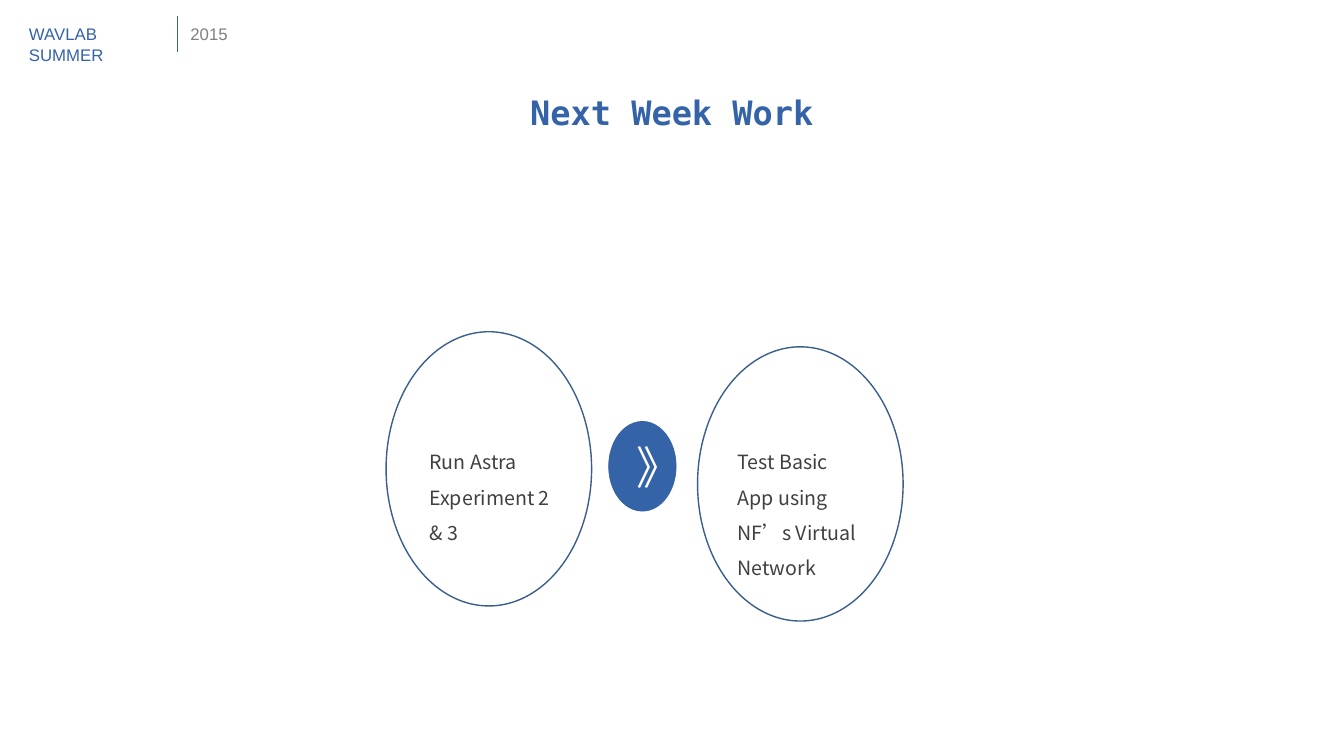
from dataclasses import dataclass

from lxml.etree import SubElement
from pptx import Presentation
from pptx.dml.color import RGBColor
from pptx.enum.shapes import MSO_CONNECTOR, MSO_SHAPE
from pptx.enum.text import MSO_ANCHOR, PP_ALIGN
from pptx.oxml.ns import qn
from pptx.util import Cm, Pt

TITLE = "Next Week Work"
HEADER = [("WAVLAB SUMMER", 0.48, 4.17), ("2015", 4.55, 1.45)]  # text, left, width
# text, ellipse left and top, text left and height
STEPS = [
    ("Run Astra Experiment 2 & 3", 9.73, 8.36, 10.57, 2.95),
    ("Test Basic App using NF’s Virtual Network", 17.58, 8.74, 18.34, 3.84),
]
STEP_W, STEP_H = 5.18, 6.91
STEP_TEXT_TOP, STEP_TEXT_W = 10.92, 3.56
BADGE = (15.34, 10.62, 1.7, 2.26)
CHEVRON = (15.85, 11.07, 0.71, 1.37)


@dataclass(frozen=True)
class Theme:
    blue: str = "3563A8"
    outline: str = "3A5F8C"
    body: str = "404040"
    grey: str = "808080"
    white: str = "FFFFFF"
    title_size: int = 24
    body_size: int = 14
    header_size: int = 12
    chevron_size: int = 32
    title_font: str = "DejaVu Sans Mono"
    body_font: str = "Noto Sans CJK SC"
    header_font: str = "Arial"
    chevron_font: str = "Lato"


T = Theme()


def rgb(value):
    return RGBColor.from_string(value)


def write(sp, text, *, font, size, color, bold=False, align=PP_ALIGN.LEFT,
          spacing=None, anchor=MSO_ANCHOR.TOP, wrap=True, inset=(0.25, 0.13)):
    """Fill a shape with one paragraph, using the font for East Asian glyphs too."""
    tf = sp.text_frame
    tf.word_wrap, tf.vertical_anchor = wrap, anchor
    tf.margin_left = tf.margin_right = Cm(inset[0])
    tf.margin_top = tf.margin_bottom = Cm(inset[1])
    p = tf.paragraphs[0]
    p.alignment = align
    if spacing:
        p.line_spacing = spacing
    r = p.add_run()
    r.text = text
    r.font.name, r.font.size, r.font.bold = font, Pt(size), bold
    r.font.color.rgb = rgb(color)
    SubElement(r.font._element, qn("a:ea"), typeface=font)


def add_text(s, text, box, **fmt):
    write(s.shapes.add_textbox(*map(Cm, box)), text, **fmt)


def add_ellipse(s, box, line, width, fill=None):
    sp = s.shapes.add_shape(MSO_SHAPE.OVAL, *map(Cm, box))
    sp.shadow.inherit = False
    if fill:
        sp.fill.solid()
        sp.fill.fore_color.rgb = rgb(fill)
    else:
        sp.fill.background()
    sp.line.color.rgb, sp.line.width = rgb(line), Pt(width)


def add_title(s):
    sp = s.shapes.title
    sp.left, sp.top, sp.width, sp.height = map(Cm, (11.89, 2.18, 10.08, 1.27))
    write(sp, TITLE, font=T.title_font, size=T.title_size, color=T.blue, bold=True,
          align=PP_ALIGN.CENTER, anchor=MSO_ANCHOR.MIDDLE)


def add_header(s):
    line = s.shapes.add_connector(MSO_CONNECTOR.STRAIGHT, Cm(4.47), Cm(0.41), Cm(4.47), Cm(1.3))
    line.line.color.rgb, line.line.width = rgb(T.blue), Pt(0.5)
    SubElement(line._element.spPr, qn("a:effectLst"))
    for (text, left, width), color in zip(HEADER, (T.blue, T.grey)):
        add_text(s, text, (left, 0.48, width, 0.77), font=T.header_font,
                 size=T.header_size, color=color, wrap=False)


def add_steps(s):
    for text, left, top, text_left, text_h in STEPS:
        add_ellipse(s, (left, top, STEP_W, STEP_H), T.outline, 1)
        add_text(s, text, (text_left, STEP_TEXT_TOP, STEP_TEXT_W, text_h),
                 font=T.body_font, size=T.body_size, color=T.body, spacing=1.5)
    add_ellipse(s, BADGE, T.blue, 0.5, fill=T.blue)
    add_text(s, "》", CHEVRON, font=T.chevron_font, size=T.chevron_size, color=T.white,
             anchor=MSO_ANCHOR.MIDDLE, inset=(0.18, 0.1))


def main():
    prs = Presentation()
    prs.slide_width, prs.slide_height = Cm(33.87), Cm(19.05)
    s = prs.slides.add_slide(prs.slide_layouts[5])
    add_title(s)
    add_header(s)
    add_steps(s)
    prs.save("out.pptx")


if __name__ == "__main__":
    main()
